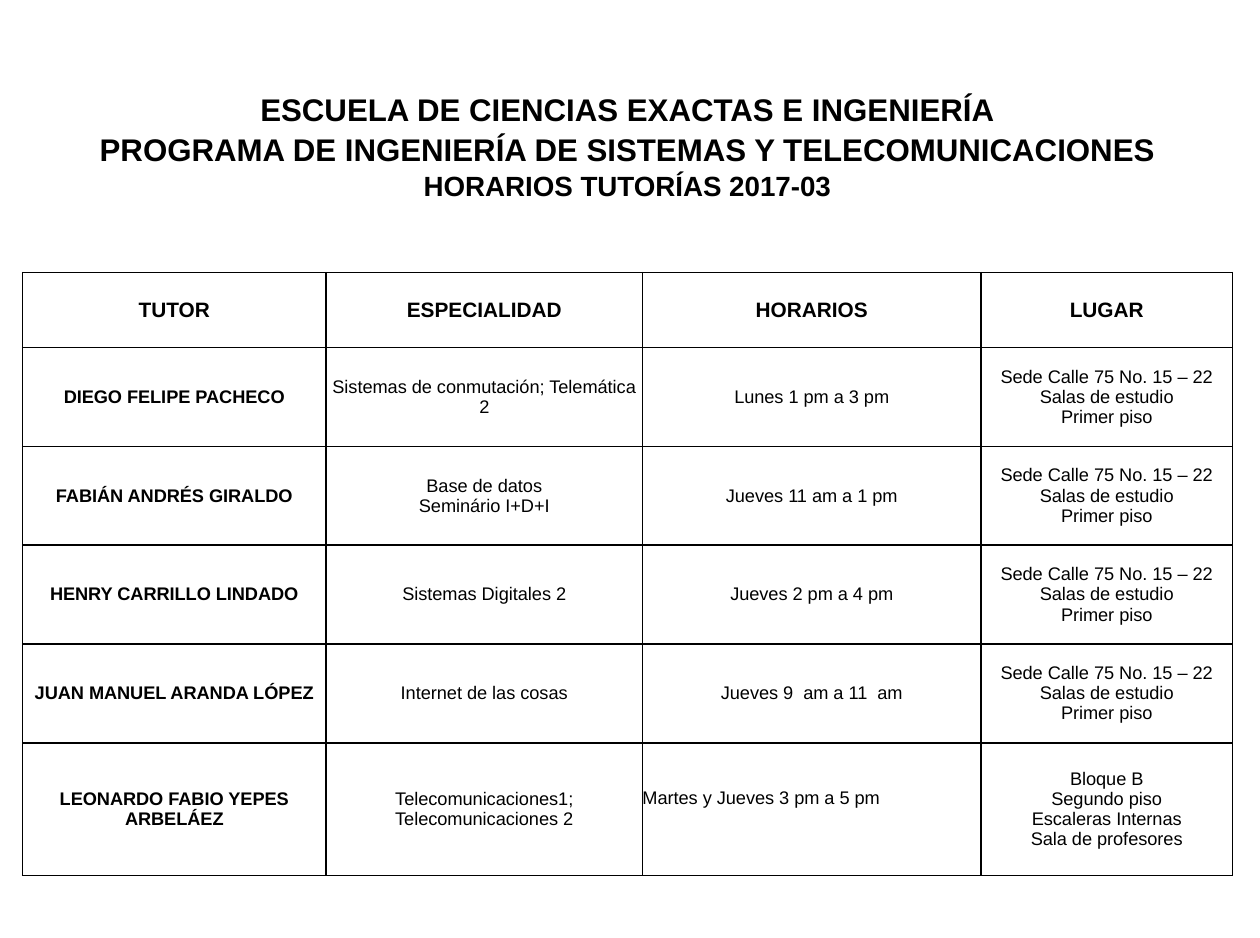
from dataclasses import dataclass

from lxml import etree
from pptx import Presentation
from pptx import util as u
from pptx.dml.color import RGBColor
from pptx.enum import text
from pptx.oxml import ns


@dataclass(frozen=True)
class Theme:
    font: str = "Arial"
    ink: str = "000000"
    paper: str = "FFFFFF"
    heading: float = 18
    term: float = 16
    header: float = 12
    body: float = 10.5
    border: float = 1


THEME = Theme()
WIDTH, HEIGHT = u.Inches(10.08), u.Inches(7.5)

# Grid of the timetable, in inches
LEFT, TOP = 0.18, 2.18
COLUMNS = [2.43, 2.53, 2.71, 2.01]
ROWS = [0.6] + [0.79] * 4 + [1.06]

HEADING = [
    ("ESCUELA DE CIENCIAS EXACTAS E INGENIERÍA", THEME.heading),
    ("PROGRAMA DE INGENIERÍA DE SISTEMAS Y TELECOMUNICACIONES", THEME.heading),
    ("HORARIOS TUTORÍAS 2017-03", THEME.term),
]
STUDY_ROOMS = "Sede Calle 75 No. 15 – 22 Salas de estudio\nPrimer piso"
STAFF_ROOM = "Bloque B\nSegundo piso\nEscaleras Internas\nSala de profesores"
TIMETABLE = [
    ("TUTOR", "ESPECIALIDAD", "HORARIOS", "LUGAR"),
    ("DIEGO FELIPE PACHECO", "Sistemas de conmutación; Telemática 2",
     "Lunes 1 pm a 3 pm", STUDY_ROOMS),
    ("FABIÁN ANDRÉS GIRALDO", "Base de datos\nSeminário I+D+I",
     "Jueves 11 am a 1 pm", STUDY_ROOMS),
    ("HENRY CARRILLO LINDADO", "Sistemas Digitales 2",
     "Jueves 2 pm a 4 pm", STUDY_ROOMS),
    ("JUAN MANUEL ARANDA LÓPEZ", "Internet de las cosas",
     "Jueves 9  am a 11  am", STUDY_ROOMS),
    ("LEONARDO FABIO YEPES ARBELÁEZ",
     "Telecomunicaciones1; Telecomunicaciones 2",
     "Martes y Jueves 3 pm a 5 pm", STAFF_ROOM),
]


def style_paragraph(paragraph, size, bold, align=text.PP_ALIGN.CENTER):
    paragraph.alignment = align
    for run in paragraph.runs:
        run.font.name = THEME.font
        run.font.size = u.Pt(size)
        run.font.bold = bold
        run.font.color.rgb = RGBColor.from_string(THEME.ink)


def draw_borders(cell):
    properties = cell._tc.get_or_add_tcPr()
    for side in ("a:lnL", "a:lnR", "a:lnT", "a:lnB"):
        line = etree.SubElement(properties, ns.qn(side),
                                w=str(u.Pt(THEME.border)))
        fill = etree.SubElement(line, ns.qn("a:solidFill"))
        etree.SubElement(fill, ns.qn("a:srgbClr"), val=THEME.ink)


def fill_cell(cell, wording, size, bold):
    draw_borders(cell)
    cell.fill.background()
    cell.margin_left = cell.margin_right = 0
    cell.margin_top = cell.margin_bottom = 0
    cell.vertical_anchor = text.MSO_ANCHOR.MIDDLE
    cell.text_frame.text = wording
    for paragraph in cell.text_frame.paragraphs:
        style_paragraph(paragraph, size, bold)


def add_heading(slide):
    title = slide.shapes.title
    title.left, title.top = int(WIDTH * 0.006), int(HEIGHT * 0.09)
    title.width, title.height = int(WIDTH * 0.984), int(HEIGHT * 0.13)
    frame = title.text_frame
    frame.text = "\n".join(line for line, _ in HEADING)
    frame.word_wrap = True
    frame.auto_size = text.MSO_AUTO_SIZE.NONE
    frame.vertical_anchor = text.MSO_ANCHOR.TOP
    for paragraph, (_, size) in zip(frame.paragraphs, HEADING):
        style_paragraph(paragraph, size, True)
        paragraph.space_before = u.Pt(1)


def add_timetable(slide):
    timetable = slide.shapes.add_table(
        len(ROWS), len(COLUMNS), u.Inches(LEFT), u.Inches(TOP),
        u.Inches(sum(COLUMNS)), u.Inches(sum(ROWS))).table
    timetable.horz_banding = False
    for column, width in zip(timetable.columns, COLUMNS):
        column.width = u.Inches(width)
    for row, height in zip(timetable.rows, ROWS):
        row.height = u.Inches(height)
    for r, entries in enumerate(TIMETABLE):
        size = THEME.header if r == 0 else THEME.body
        for c, wording in enumerate(entries):
            fill_cell(timetable.cell(r, c), wording, size, r == 0 or c == 0)

    # The last schedule starts at the left, a little above the middle
    last_schedule = timetable.cell(len(ROWS) - 1, 2)
    last_schedule.margin_bottom = u.Inches(0.17)
    last_schedule.text_frame.paragraphs[0].alignment = text.PP_ALIGN.LEFT


def main():
    deck = Presentation()
    deck.slide_width, deck.slide_height = WIDTH, HEIGHT
    slide = deck.slides.add_slide(deck.slide_layouts[5])
    slide.background.fill.solid()
    slide.background.fill.fore_color.rgb = RGBColor.from_string(THEME.paper)
    add_timetable(slide)
    add_heading(slide)
    deck.save("out.pptx")


if __name__ == "__main__":
    main()
